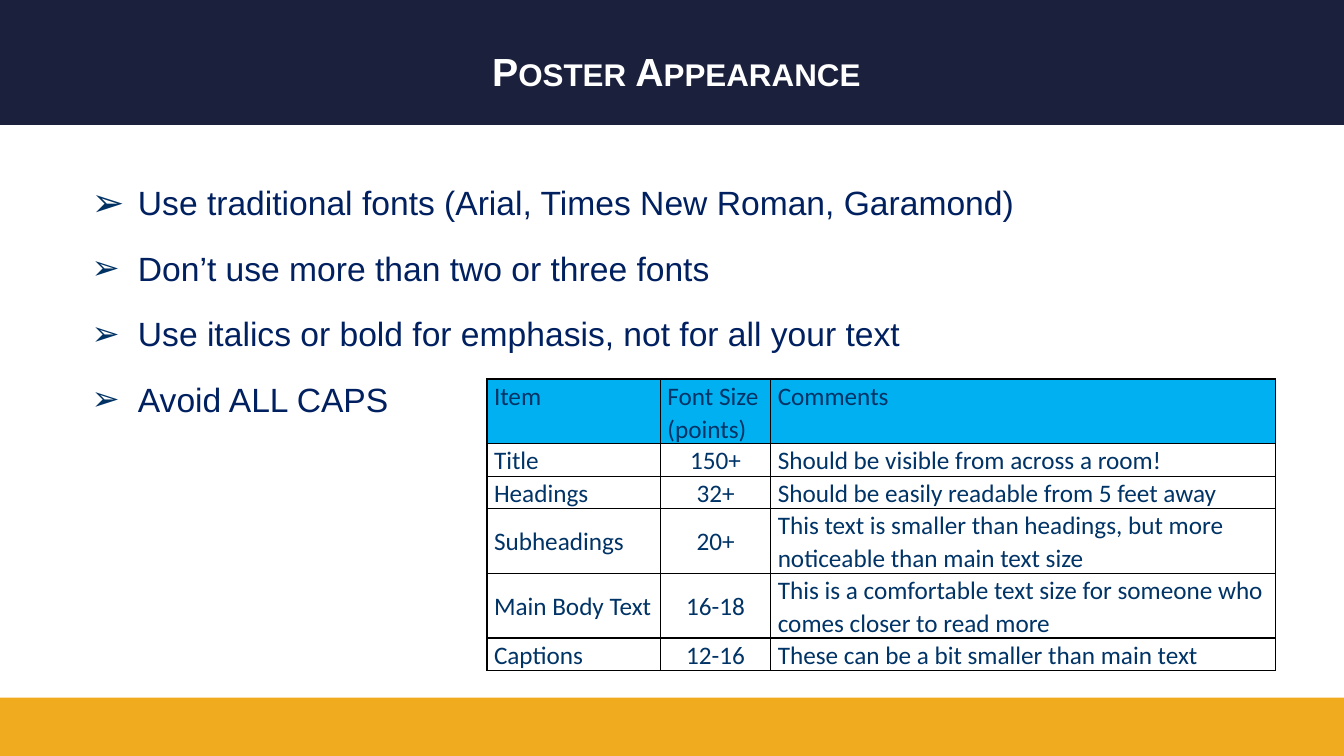
import lxml.etree
import pptx
import pptx.dml.color
import pptx.enum.shapes
import pptx.enum.text
import pptx.oxml.ns
import pptx.util

WIDTH, HEIGHT = 13.33, 7.5
NAVY, GOLD, WHITE, BLACK = "1B203D", "F1AB1F", "FFFFFF", "000000"
TEXT_BLUE, BULLET_BLUE, TABLE_BLUE, HEADER_BLUE = "002060", "003264", "003366", "00B0F0"
LEFT, CENTER = pptx.enum.text.PP_ALIGN.LEFT, pptx.enum.text.PP_ALIGN.CENTER
TOP, MIDDLE = pptx.enum.text.MSO_ANCHOR.TOP, pptx.enum.text.MSO_ANCHOR.MIDDLE

TIPS = [
    "Use traditional fonts (Arial, Times New Roman, Garamond)",
    "Don’t use more than two or three fonts",
    "Use italics or bold for emphasis, not for all your text",
    "Avoid ALL CAPS",
]
FONT_SIZES = [
    ("Item", "Font Size (points)", "Comments"),
    ("Title", "150+", "Should be visible from across a room!"),
    ("Headings", "32+", "Should be easily readable from 5 feet away"),
    ("Subheadings", "20+",
     "This text is smaller than headings, but more noticeable than main text size"),
    ("Main Body Text", "16-18",
     "This is a comfortable text size for someone who comes closer to read more"),
    ("Captions", "12-16", "These can be a bit smaller than main text"),
]
COLUMN_SHARES = (0.22, 0.14, 0.64)


def color(value):
    return pptx.dml.color.RGBColor.from_string(value)


def inches(box):
    return [pptx.util.Inches(length) for length in box]


def apply(target, values):
    for name, value in values.items():
        setattr(target, name, value)


def add_element(parent, tag, **attributes):
    element = lxml.etree.SubElement(parent, pptx.oxml.ns.qn(tag))
    for name, value in attributes.items():
        element.set(name, str(value))
    return element


def write(paragraph, text, size, font, text_color, bold=False):
    run = paragraph.add_run()
    run.text = text
    apply(run.font, {"size": pptx.util.Pt(size), "name": font, "bold": bold})
    run.font.color.rgb = color(text_color)
    return run


def add_bar(slide, box, fill):
    bar = slide.shapes.add_shape(pptx.enum.shapes.MSO_SHAPE.RECTANGLE, *inches(box))
    bar.shadow.inherit = False
    bar.fill.solid()
    bar.fill.fore_color.rgb = color(fill)
    bar.line.fill.background()


def add_text_frame(slide, box, anchor):
    frame = slide.shapes.add_textbox(*inches(box)).text_frame
    apply(frame, {"word_wrap": True, "vertical_anchor": anchor})
    return frame


def add_title(slide, box, text):
    paragraph = add_text_frame(slide, box, MIDDLE).paragraphs[0]
    paragraph.alignment = CENTER
    run = write(paragraph, text, 28, "Arial", WHITE, bold=True)
    run.font._element.set("cap", "small")


def add_bullet(paragraph, indent, percent):
    properties = paragraph._p.get_or_add_pPr()
    properties.set("marL", str(pptx.util.Inches(indent)))
    properties.set("indent", str(-pptx.util.Inches(indent)))
    bullet_color = add_element(properties, "a:buClr")
    add_element(bullet_color, "a:srgbClr", val=BULLET_BLUE)
    add_element(properties, "a:buSzPct", val=percent * 1000)
    add_element(properties, "a:buFont", typeface="Arial")
    add_element(properties, "a:buChar", char="➢")


def add_tips(slide, box, tips):
    frame = add_text_frame(slide, box, TOP)
    for index, tip in enumerate(tips):
        paragraph = frame.add_paragraph() if index else frame.paragraphs[0]
        apply(paragraph, {"space_before": pptx.util.Pt(6), "space_after": pptx.util.Pt(12)})
        add_bullet(paragraph, 0.46, 100 if index else 117)
        write(paragraph, tip, 24, "Arial", TEXT_BLUE)


def add_borders(cell):
    properties = cell._tc.get_or_add_tcPr()
    for position, side in enumerate(("a:lnL", "a:lnR", "a:lnT", "a:lnB")):
        line = lxml.etree.Element(pptx.oxml.ns.qn(side), w=str(pptx.util.Pt(1)))
        fill = add_element(line, "a:solidFill")
        add_element(fill, "a:srgbClr", val=BLACK)
        properties.insert(position, line)


def fill_cell(cell, text, is_header, is_number):
    margin = pptx.util.Inches(0.07)
    apply(cell, {"margin_left": margin, "margin_right": margin, "margin_top": 0,
                 "margin_bottom": 0, "vertical_anchor": TOP if is_header else MIDDLE})
    if is_header:
        cell.fill.solid()
        cell.fill.fore_color.rgb = color(HEADER_BLUE)
    else:
        cell.fill.background()
    add_borders(cell)
    paragraph = cell.text_frame.paragraphs[0]
    apply(paragraph, {"line_spacing": 1.07,
                      "alignment": CENTER if is_number and not is_header else LEFT})
    write(paragraph, text, 18, "Calibri", TABLE_BLUE)


def add_size_table(slide, box, rows):
    table = slide.shapes.add_table(len(rows), len(COLUMN_SHARES), *inches(box)).table
    apply(table, {"first_row": False, "horz_banding": False})
    for column, share in zip(table.columns, COLUMN_SHARES):
        column.width = pptx.util.Inches(box[2] * share)
    for row_index, texts in enumerate(rows):
        table.rows[row_index].height = pptx.util.Inches(0.28 if row_index else 0.55)
        for column_index, text in enumerate(texts):
            fill_cell(table.cell(row_index, column_index), text,
                      is_header=row_index == 0, is_number=column_index == 1)


def main():
    presentation = pptx.Presentation()
    apply(presentation, {"slide_width": pptx.util.Inches(WIDTH),
                         "slide_height": pptx.util.Inches(HEIGHT)})
    slide = presentation.slides.add_slide(presentation.slide_layouts[6])
    add_bar(slide, (0, 0, WIDTH, 1.24), NAVY)
    add_bar(slide, (0, HEIGHT - 0.58, WIDTH, 0.58), GOLD)
    add_title(slide, (0.65, 0.16, 12.12, 1.08), "Poster Appearance")
    add_tips(slide, (0.81, 1.76, 10.45, 5.47), TIPS)
    add_size_table(slide, (4.83, 3.76, 7.82, 2.8), FONT_SIZES)
    presentation.save("out.pptx")


if __name__ == "__main__":
    main()
